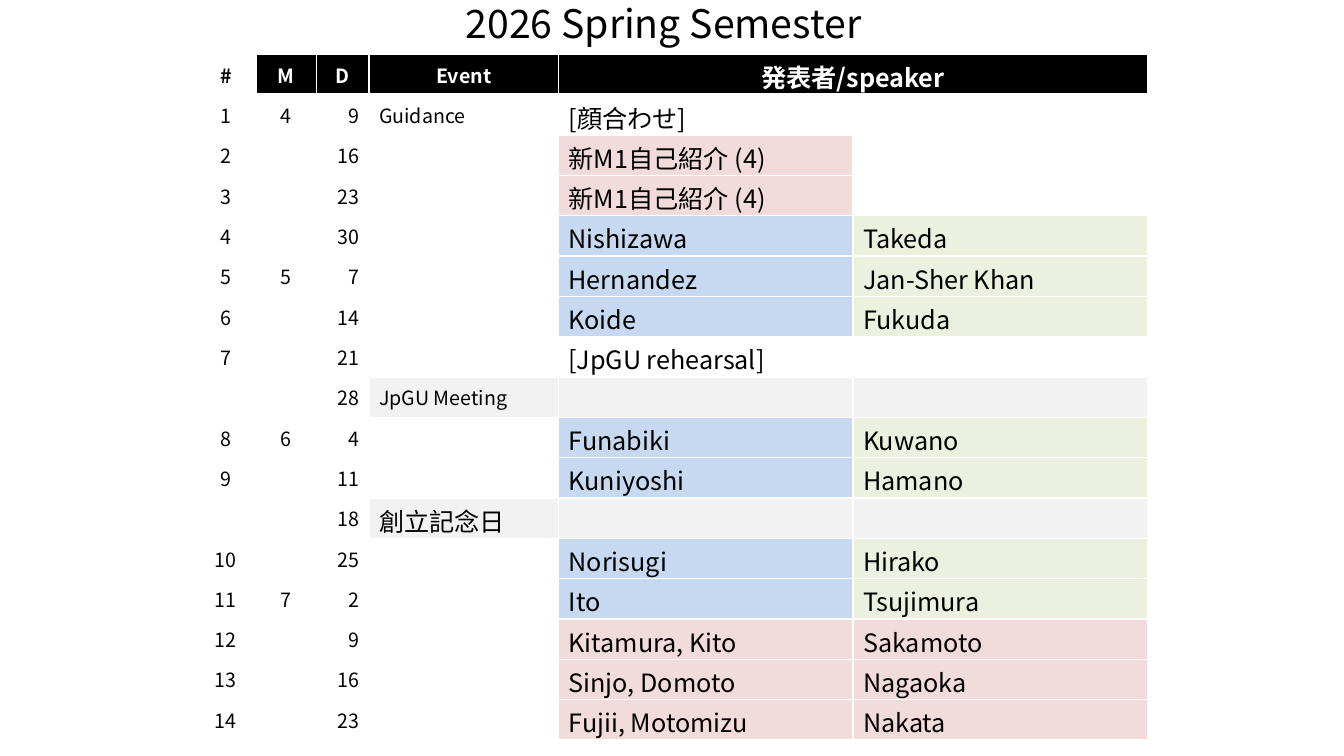
import pptx
import pptx.dml.color
import pptx.enum.text
import pptx.oxml
import pptx.oxml.ns
import pptx.util
from dataclasses import dataclass

Inches = pptx.util.Inches
Align = pptx.enum.text.PP_ALIGN
Middle = pptx.enum.text.MSO_ANCHOR.MIDDLE


@dataclass(frozen=True)
class Theme:
    font: str = "Noto Sans CJK JP"
    title: int = 28
    name: int = 18
    small: int = 14
    black: str = "000000"
    white: str = "FFFFFF"
    pink: str = "F2DCDB"
    blue: str = "C6D9F1"
    green: str = "EBF1DE"
    gray: str = "F2F2F2"


theme = Theme()


def write(frame, text, *, size, color=theme.black, bold=False, align=Align.LEFT):
    paragraph = frame.paragraphs[0]
    paragraph.alignment = align
    run = paragraph.add_run()
    run.text = text
    run.font.size = pptx.util.Pt(size)
    run.font.bold = bold
    run.font.color.rgb = pptx.dml.color.RGBColor.from_string(color)
    run.font.name = theme.font
    east_asian = pptx.oxml.parse_xml(
        f'<a:ea {pptx.oxml.ns.nsdecls("a")} typeface="{theme.font}"/>')
    run.font._element.append(east_asian)


def style_cell(cell, fill, bottom_width):
    """Give the cell white borders and a fill, or no fill for None."""
    properties = cell._tc.get_or_add_tcPr()
    for side, width in (("L", 1), ("R", 1), ("T", 1), ("B", bottom_width)):
        properties.append(pptx.oxml.parse_xml(
            f'<a:ln{side} {pptx.oxml.ns.nsdecls("a")} w="{pptx.util.Pt(width)}">'
            f'<a:solidFill><a:srgbClr val="{theme.white}"/></a:solidFill></a:ln{side}>'))
    if fill:
        cell.fill.solid()
        cell.fill.fore_color.rgb = pptx.dml.color.RGBColor.from_string(fill)
    else:
        cell.fill.background()


# Fills of the event and the two speaker columns for each kind of week
week_fills = {
    "open": (None, None, None),
    "intro": (None, theme.pink, None),
    "talk": (None, theme.blue, theme.green),
    "master": (None, theme.pink, theme.pink),
    "off": (theme.gray, theme.gray, theme.gray),
}
header = ("#", "M", "D", "Event", "発表者/speaker", "")
# kind of week, month, day, event, first speaker, second speaker
weeks = [
    ("open", "4", "9", "Guidance", "[顔合わせ]", ""),
    ("intro", "", "16", "", "新M1自己紹介 (4)", ""),
    ("intro", "", "23", "", "新M1自己紹介 (4)", ""),
    ("talk", "", "30", "", "Nishizawa", "Takeda"),
    ("talk", "5", "7", "", "Hernandez", "Jan-Sher Khan"),
    ("talk", "", "14", "", "Koide", "Fukuda"),
    ("open", "", "21", "", "[JpGU rehearsal]", ""),
    ("off", "", "28", "JpGU Meeting", "", ""),
    ("talk", "6", "4", "", "Funabiki", "Kuwano"),
    ("talk", "", "11", "", "Kuniyoshi", "Hamano"),
    ("off", "", "18", "創立記念日", "", ""),
    ("talk", "", "25", "", "Norisugi", "Hirako"),
    ("talk", "7", "2", "", "Ito", "Tsujimura"),
    ("master", "", "9", "", "Kitamura, Kito", "Sakamoto"),
    ("master", "", "16", "", "Sinjo, Domoto", "Nagaoka"),
    ("master", "", "23", "", "Fujii, Motomizu", "Nakata"),
]

# Number the weeks that hold a seminar
rows = [(header, (None,) + (theme.black,) * 5)]
number = 0
for kind, *entries in weeks:
    number += kind != "off"
    label = "" if kind == "off" else str(number)
    rows.append(((label, *entries), (None,) * 3 + week_fills[kind]))

column_widths = (0.6, 0.6, 0.52, 1.88, 2.92, 2.92)
column_aligns = (Align.CENTER, Align.CENTER, Align.RIGHT) + (Align.LEFT,) * 3
row_height = 0.4
speaker_column = 4
large_events = {"創立記念日"}

presentation = pptx.Presentation()
presentation.slide_width = Inches(13.33)
presentation.slide_height = Inches(7.5)
slide = presentation.slides.add_slide(presentation.slide_layouts[6])

title = slide.shapes.add_textbox(Inches(4.52), Inches(-0.01), Inches(4.3), Inches(0.57))
title.text_frame.word_wrap = False
title.text_frame.margin_top = title.text_frame.margin_bottom = 0
write(title.text_frame, "2026 Spring Semester", size=theme.title)

table = slide.shapes.add_table(
    len(rows), len(column_widths), Inches(1.94), Inches(0.54),
    Inches(sum(column_widths)), Inches(row_height * len(rows))).table
table.first_row = table.horz_banding = False
for column, width in zip(table.columns, column_widths):
    column.width = Inches(width)

for row_index, (texts, fills) in enumerate(rows):
    is_header = row_index == 0
    table.rows[row_index].height = Inches(row_height)
    for column_index, (text, fill) in enumerate(zip(texts, fills)):
        cell = table.cell(row_index, column_index)
        style_cell(cell, fill, 3 if is_header else 1)
        cell.vertical_anchor = Middle
        is_large = column_index >= speaker_column or text in large_events
        if is_large or not text:
            cell.margin_top, cell.margin_bottom = Inches(0.04), 0
        if text:
            write(cell.text_frame, text,
                  size=theme.name if is_large else theme.small,
                  color=theme.white if is_header and fill else theme.black,
                  bold=is_header,
                  align=Align.CENTER if is_header else column_aligns[column_index])

table.cell(0, speaker_column).merge(table.cell(0, speaker_column + 1))
presentation.save("out.pptx")
